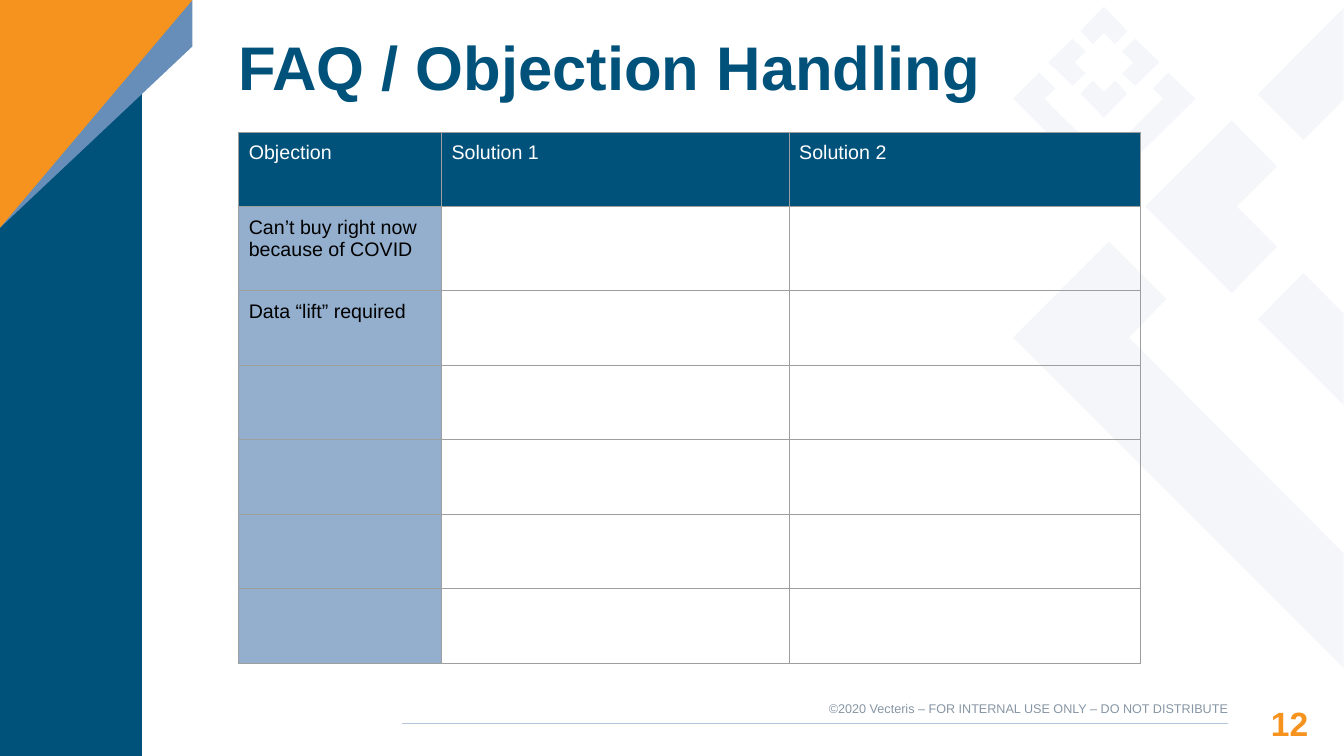
from dataclasses import dataclass

from lxml import etree
from pptx import Presentation
from pptx.dml.color import RGBColor
from pptx.enum.shapes import MSO_CONNECTOR
from pptx.enum.text import MSO_ANCHOR, PP_ALIGN
from pptx.oxml import parse_xml
from pptx.oxml.ns import nsdecls, qn
from pptx.util import Cm, Pt

LEFT, RIGHT = PP_ALIGN.LEFT, PP_ALIGN.RIGHT
TOP, MIDDLE = MSO_ANCHOR.TOP, MSO_ANCHOR.MIDDLE
STRAIGHT = MSO_CONNECTOR.STRAIGHT


@dataclass(frozen=True)
class Theme:
    font: str = "Arial"
    navy: str = "00527B"
    blue: str = "668EB8"
    orange: str = "F6921E"
    pale: str = "E9EEF4"
    side: str = "93AFCD"
    rule: str = "B3C6DC"
    grid: str = "9E9E9E"
    grey: str = "8796A4"
    white: str = "FFFFFF"
    black: str = "000000"
    title: int = 44
    page: int = 24
    body: int = 14
    small: int = 9


THEME = Theme()

WIDE, HIGH = 33.87, 19.05

TILES = [
    [(5.51, 2.84), (3.33, 5), (5.51, 7.19), (6.65, 6.02), (5.64, 5), (6.65, 3.99)],
    [(2.41, 5.89), (0, 8.31), (8.33, 16.64), (8.33, 13.74), (2.92, 8.31), (3.86, 7.34)],
    [(7.32, 6.68), (6.17, 7.85), (8.33, 10.01), (8.33, 7.7)],
    [(8.33, 0), (6.17, 2.18), (7.32, 3.33), (8.33, 2.31)],
    [(0.66, 1.63), (0, 2.29), (2.29, 4.57), (4.6, 2.29), (3.91, 1.63),
     (3.53, 2.03), (3.78, 2.29), (2.29, 3.78), (0.79, 2.29), (1.07, 2.03)],
]
HUB = (2.29, 1.37)
CHEVRON = [(0.79, -0.59), (0.46, -0.28), (0.74, 0), (0.46, 0.28), (0.79, 0.59), (1.4, 0)]

COLS = [5.11, 8.76, 8.86]
ROWS = [1.88, 2.11] + [1.88] * 5
HEADS = ["Objection", "Solution 1", "Solution 2"]
ISSUES = ["Can’t buy right now because of COVID", "Data “lift” required"]


def rgb(code):
    return RGBColor.from_string(code)


def write(frame, text, size=THEME.body, color=THEME.black, bold=False,
          align=LEFT, space=1.0):
    para = frame.paragraphs[0]
    para.alignment = align
    para.line_spacing = space
    run = para.add_run()
    run.text = text
    font = run.font
    font.name, font.size, font.bold = THEME.font, Pt(size), bold
    font.color.rgb = rgb(color)


def label(slide, box, text, anchor=TOP, **style):
    frame = slide.shapes.add_textbox(*(Cm(n) for n in box)).text_frame
    frame.word_wrap = True
    frame.vertical_anchor = anchor
    frame.margin_left = frame.margin_right = 0
    frame.margin_top = frame.margin_bottom = 0
    write(frame, text, **style)


def patch(slide, box, points, color, alpha=None):
    left, top = box[:2]
    spots = [(Cm(left + x), Cm(top + y)) for x, y in points]
    pen = slide.shapes.build_freeform(*spots[0])
    pen.add_line_segments(spots[1:], close=True)
    shape = pen.convert_to_shape()
    shape.shadow.inherit = False
    shape.fill.solid()
    shape.fill.fore_color.rgb = rgb(color)
    shape.line.fill.background()
    if alpha:
        tint = shape.fill._xPr.find(".//" + qn("a:srgbClr"))
        etree.SubElement(tint, qn("a:alpha")).set("val", str(alpha * 1000))


def motif(slide, box):
    ring = []
    chevron = CHEVRON
    for _ in range(4):
        ring.append([(HUB[0] + x, HUB[1] + y) for x, y in chevron])
        chevron = [(-y, x) for x, y in chevron]
    for points in TILES + ring:
        patch(slide, box, points, THEME.pale, alpha=49)


def corner(slide, box):
    wide, high = box[2:]
    bar, fold, edge = 3.58, 5.74, 1.17
    patch(slide, box, [(0, 0), (bar, 0), (bar, high), (0, high)], THEME.navy)
    patch(slide, box, [(0, 0), (wide, 0), (wide, edge), (0, fold)], THEME.blue)
    patch(slide, box, [(0, 0), (wide, 0), (0, fold)], THEME.orange)


def footer(slide, box):
    left, top, wide, high = box
    end = left + 20.81
    level = top + 0.71
    rule = slide.shapes.add_connector(STRAIGHT, Cm(left), Cm(level), Cm(end), Cm(level))
    rule.line.color.rgb = rgb(THEME.rule)
    rule.line.width = Pt(0.82)
    etree.SubElement(rule._element.spPr, qn("a:effectLst"))
    label(slide, (end - 10.82, top + 0.13, 10.82, 0.38),
          "©2020 Vecteris – FOR INTERNAL USE ONLY – DO NOT DISTRIBUTE",
          size=THEME.small, color=THEME.grey, align=RIGHT)
    label(slide, (end, top, wide - 20.81, high), "12", size=THEME.page,
          color=THEME.orange, bold=True, align=RIGHT, space=1.19)


def border(cell):
    props = cell._tc.get_or_add_tcPr()
    for spot, side in enumerate("LRTB"):
        props.insert(spot, parse_xml(
            f'<a:ln{side} {nsdecls("a")} w="{Pt(0.75)}"><a:solidFill>'
            f'<a:srgbClr val="{THEME.grid}"/></a:solidFill></a:ln{side}>'))


def paint(cell, color):
    if color:
        cell.fill.solid()
        cell.fill.fore_color.rgb = rgb(color)
    else:
        cell.fill.background()
    border(cell)
    cell.margin_left = cell.margin_right = Cm(0.25)
    cell.margin_top = cell.margin_bottom = Cm(0.25)


def grid(slide, box):
    table = slide.shapes.add_table(len(ROWS), len(COLS), *(Cm(n) for n in box)).table
    table.first_row = table.horz_banding = False
    for col, wide in zip(table.columns, COLS):
        col.width = Cm(wide)
    for row, high in zip(table.rows, ROWS):
        row.height = Cm(high)
    for r in range(len(ROWS)):
        for c in range(len(COLS)):
            color = THEME.navy if r == 0 else THEME.side if c == 0 else None
            paint(table.cell(r, c), color)
    for c, text in enumerate(HEADS):
        write(table.cell(0, c).text_frame, text, color=THEME.white)
    for r, text in enumerate(ISSUES, 1):
        write(table.cell(r, 0).text_frame, text)


def main():
    deck = Presentation()
    deck.slide_width, deck.slide_height = Cm(WIDE), Cm(HIGH)
    slide = deck.slides.add_slide(deck.slide_layouts[6])
    motif(slide, (25.53, 0.2, 8.33, 16.64))
    corner(slide, (0, 0, 4.85, HIGH))
    footer(slide, (10.13, 17.53, 22.84, 0.97))
    grid(slide, (6.02, 3.33, sum(COLS), sum(ROWS)))
    label(slide, (6, 0.91, WIDE - 6, 1.73), "FAQ / Objection Handling", anchor=MIDDLE,
          size=THEME.title, color=THEME.navy, bold=True, space=0.9)
    deck.save("out.pptx")


if __name__ == "__main__":
    main()
